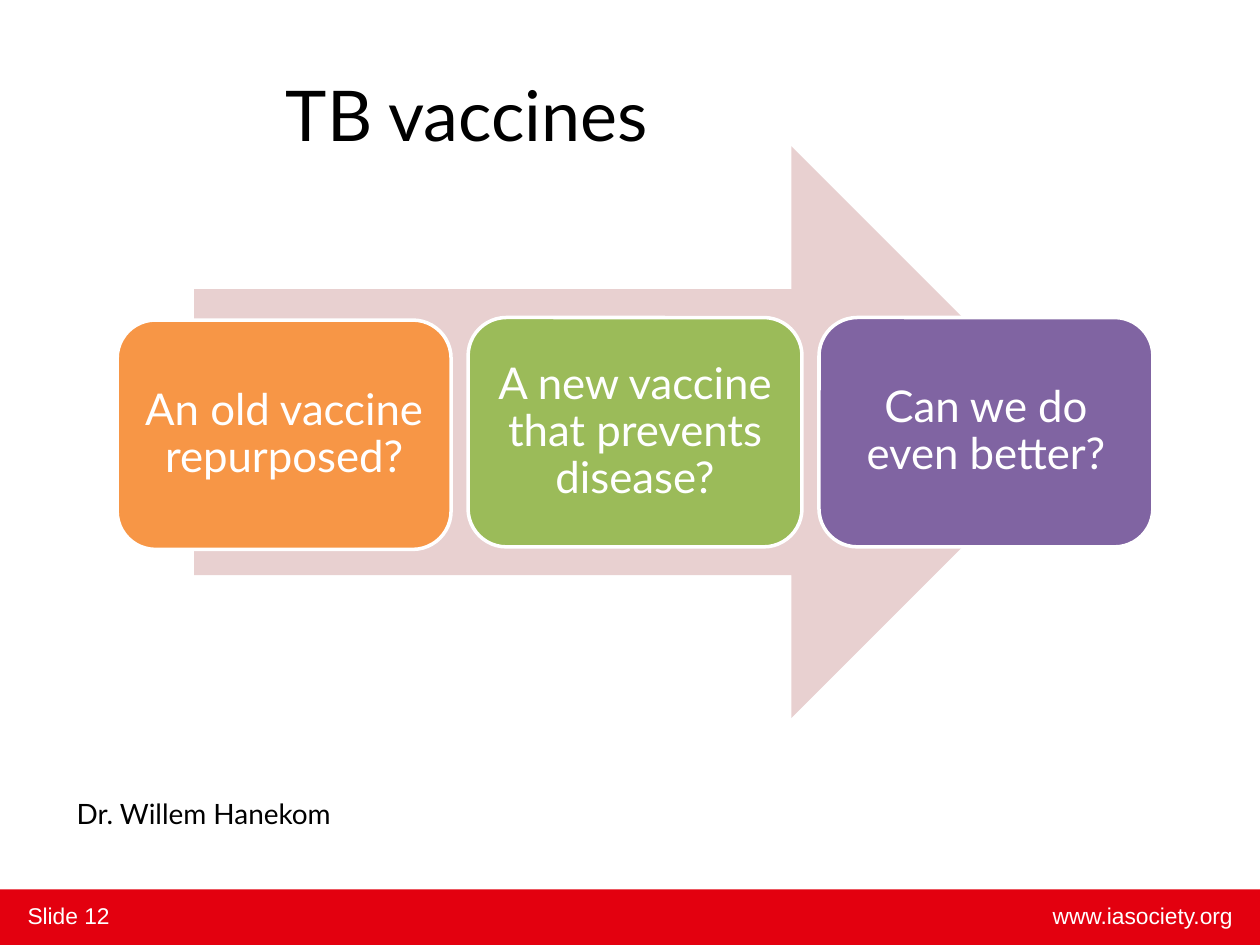
from pptx import Presentation
from pptx.dml.color import RGBColor
from pptx.enum.shapes import MSO_SHAPE as Shape
from pptx.enum.text import MSO_ANCHOR as Anchor, PP_ALIGN as Align
from pptx.util import Inches, Pt

WIDTH, HEIGHT = 10, 7.5
WHITE, BLACK = "FFFFFF", "000000"

# label, fill, top
STEPS = [
    ("An old vaccine repurposed?", "F79646", 2.54),
    ("A new vaccine that prevents disease?", "9BBB59", 2.52),
    ("Can we do even better?", "8064A2", 2.52),
]
STEP_LEFT, STEP_PITCH, STEP_WIDTH, STEP_HEIGHT = 0.93, 2.785, 2.65, 1.82
STEP_INSET = 0.19

ARROW = (1.54, 1.16, 7.01, 4.54)
FOOTER_HEIGHT = 0.44
FOOTER = (0, HEIGHT - FOOTER_HEIGHT, WIDTH, FOOTER_HEIGHT)

FOOTER_STYLE = dict(size=13, font="Arial", color=WHITE)
# text, box, style
CAPTIONS = [
    ("www.iasociety.org", (7.82, 7.11, 2.06, 0.32), dict(FOOTER_STYLE, align=Align.RIGHT)),
    ("Slide 12", (0.12, 7.11, 0.88, 0.32), dict(FOOTER_STYLE, wrap=False)),
    ("TB vaccines", (2.17, 0.52, 6.61, 0.77), dict(size=40)),
    ("Dr. Willem Hanekom", (0.51, 6.27, 6.61, 0.37), dict(size=16)),
]


def rgb(color):
    return RGBColor.from_string(color)


def write(frame, text, size, font="Lato", color=BLACK, align=Align.LEFT, wrap=True):
    frame.word_wrap = wrap
    paragraph = frame.paragraphs[0]
    paragraph.text = text
    paragraph.alignment = align
    for name, value in dict(name=font, size=Pt(size)).items():
        setattr(paragraph.font, name, value)
    paragraph.font.color.rgb = rgb(color)
    return paragraph


def add_block(slide, preset, box, fill, outline=None):
    block = slide.shapes.add_shape(preset, *map(Inches, box))
    block.shadow.inherit = False
    block.fill.solid()
    block.fill.fore_color.rgb = rgb(fill)
    if outline:
        block.line.color.rgb = rgb(outline)
        block.line.width = Pt(2)
    else:
        block.line.fill.background()
    return block


def add_step(slide, column, label, fill, top):
    box = (STEP_LEFT + column * STEP_PITCH, top, STEP_WIDTH, STEP_HEIGHT)
    frame = add_block(slide, Shape.ROUNDED_RECTANGLE, box, fill, WHITE).text_frame
    for side in ("left", "right", "top", "bottom"):
        # The rounded corners already inset the text area
        setattr(frame, f"margin_{side}", Inches(STEP_INSET - 0.09))
    frame.vertical_anchor = Anchor.MIDDLE
    write(frame, label, 25, color=WHITE, align=Align.CENTER).line_spacing = 0.9


def main():
    deck = Presentation()
    deck.slide_width, deck.slide_height = Inches(WIDTH), Inches(HEIGHT)
    slide = deck.slides.add_slide(deck.slide_layouts[6])

    add_block(slide, Shape.RECTANGLE, FOOTER, "E3000F")
    add_block(slide, Shape.RIGHT_ARROW, ARROW, "E8D0D0")
    for column, step in enumerate(STEPS):
        add_step(slide, column, *step)
    for text, box, style in CAPTIONS:
        write(slide.shapes.add_textbox(*map(Inches, box)).text_frame, text, **style)

    deck.save("out.pptx")


if __name__ == "__main__":
    main()
